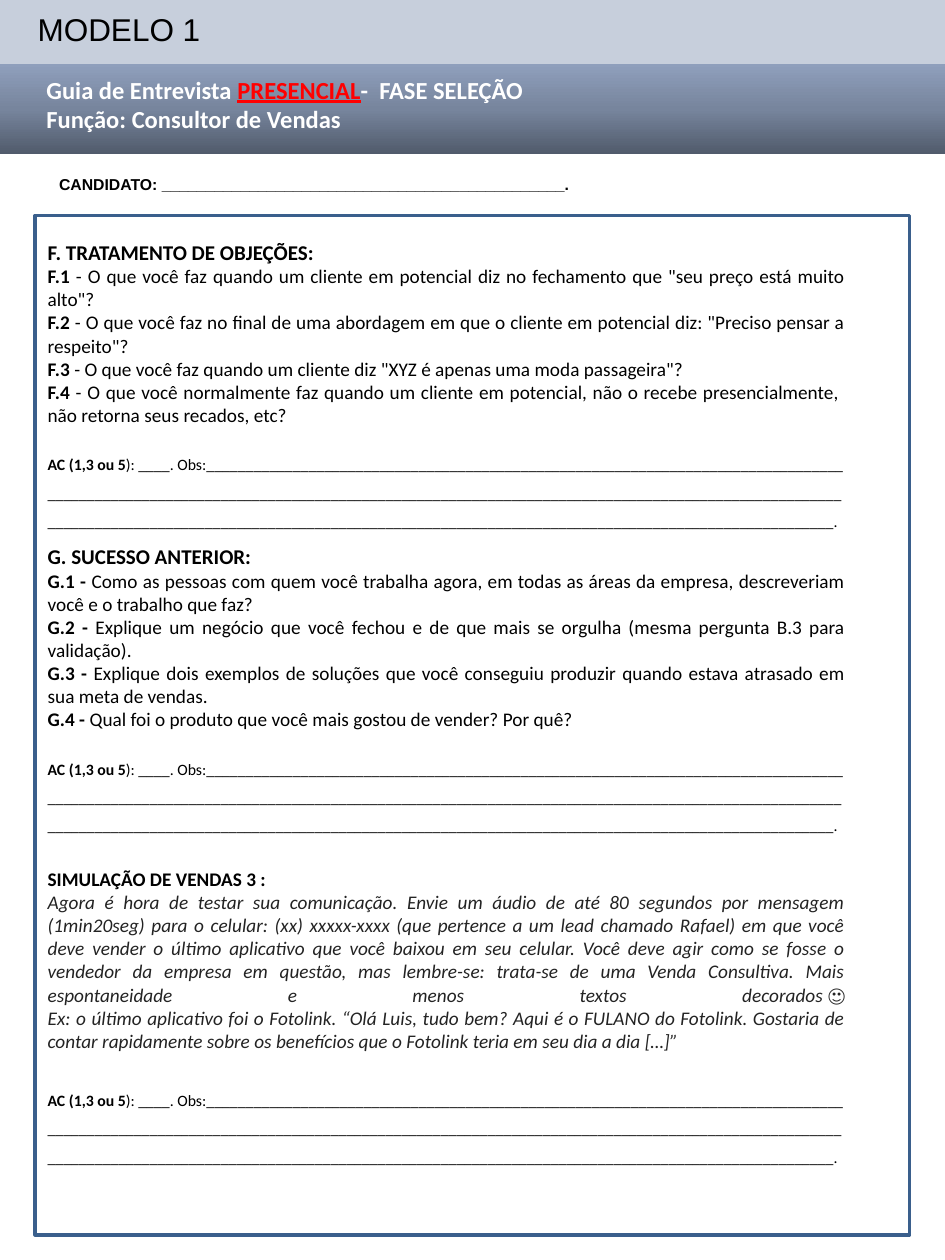
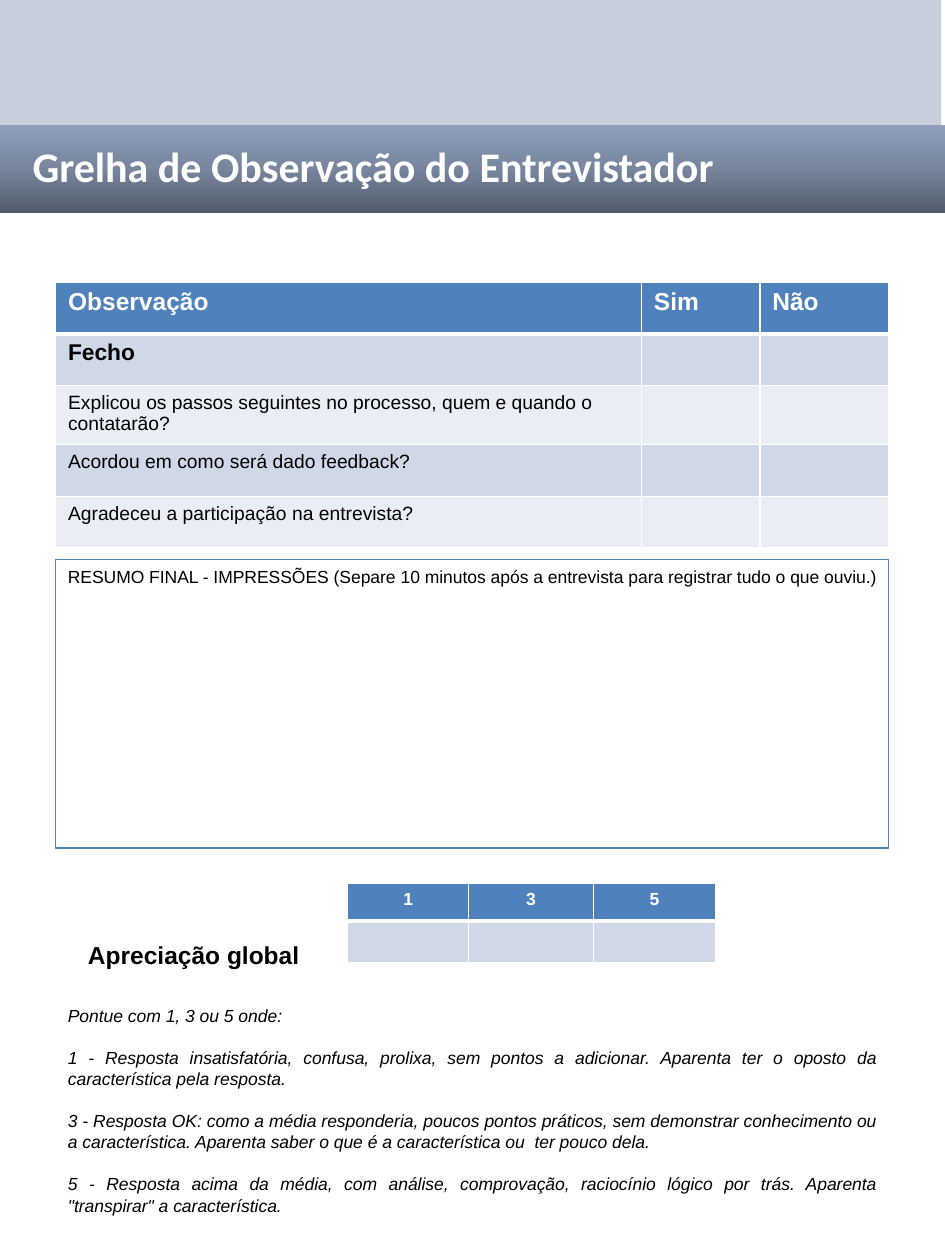
from copy import deepcopy
from dataclasses import dataclass

from lxml import etree
from pptx import Presentation
from pptx.dml.color import RGBColor
from pptx.enum.shapes import MSO_SHAPE as Preset
from pptx.enum.text import MSO_ANCHOR as Anchor, PP_ALIGN as Align
from pptx.oxml.ns import qn
from pptx.util import Inches, Pt


@dataclass(frozen=True)
class Theme:
    heading_font: str = "Calibri"
    body_font: str = "Arial"
    white: str = "FFFFFF"
    black: str = "000000"
    red: str = "FF0000"
    script_text: str = "232323"
    band: str = "C7CFDC"
    gradient: tuple = ("8F9FBC", "77859D", "515B6C")
    frame: str = "3A5F8C"
    accent: str = "4F81BD"
    row_dark: str = "D0D8E8"
    row_light: str = "E9EDF4"
    title: int = 24
    label: int = 18
    subtitle: int = 14
    group: int = 13
    section: int = 12
    question: int = 11
    note: int = 10
    answer: int = 9


THEME = Theme()
PAGE_WIDTH, PAGE_HEIGHT = 7.5, 10

OBJECTIONS = [
    ("F.1 ", '- O que você faz quando um cliente em potencial diz no fechamento que '
             '"seu preço está muito alto"?'),
    ("F.2 ", '- O que você faz no final de uma abordagem em que o cliente em potencial diz: '
             '"Preciso pensar a respeito"?'),
    ("F.3 ", '- O que você faz quando um cliente diz "XYZ é apenas uma moda passageira"?'),
    ("F.4 ", "- O que você normalmente faz quando um cliente em potencial, não o recebe "
             "presencialmente,  não retorna seus recados, etc?"),
]
SUCCESSES = [
    ("G.1 - ", "Como as pessoas com quem você trabalha agora, em todas as áreas da empresa, "
               "descreveriam você e o trabalho que faz?"),
    ("G.2 - ", "Explique um negócio que você fechou e de que mais se orgulha (mesma pergunta "
               "B.3 para validação)."),
    ("G.3 - ", "Explique dois exemplos de soluções que você conseguiu produzir quando estava "
               "atrasado em sua meta de vendas."),
    ("G.4 - ", "Qual foi o produto que você mais gostou de vender? Por quê?"),
]
SIMULATION = (
    "Agora é hora de testar sua comunicação. Envie um áudio de até 80 segundos por mensagem "
    "(1min20seg) para o celular: (xx) xxxxx-xxxx (que pertence a um lead chamado Rafael) em que "
    "você deve vender o último aplicativo que você baixou em seu celular. Você deve agir como se "
    "fosse o vendedor da empresa em questão, mas lembre-se: trata-se de uma Venda Consultiva. "
    "Mais espontaneidade e menos textos decorados\u00a0")
EXAMPLE = (
    "Ex: o último aplicativo foi o Fotolink. “Olá Luis, tudo bem? Aqui é o FULANO do Fotolink. "
    "Gostaria de contar rapidamente sobre os benefícios que o Fotolink teria em seu dia a dia […]”")
SCORES = [
    "Pontue com 1, 3 ou 5 onde:",
    "1 - Resposta insatisfatória, confusa, prolixa, sem pontos a adicionar. Aparenta ter o "
    "oposto da característica pela resposta.",
    "3 - Resposta OK: como a média responderia, poucos pontos práticos, sem demonstrar "
    "conhecimento ou a característica. Aparenta saber o que é a característica ou  ter pouco dela.",
    '5 - Resposta acima da média, com análise, comprovação, raciocínio lógico por trás. Aparenta '
    '"transpirar" a característica.',
]


def rgb(value):
    return RGBColor.from_string(value)


# Text
def add_text_box(slide, left, top, width, height, anchor=Anchor.TOP):
    box = slide.shapes.add_textbox(Inches(left), Inches(top), Inches(width), Inches(height))
    frame = box.text_frame
    frame.word_wrap = True
    frame.vertical_anchor = anchor
    return frame


def add_paragraph(frame, text, size, font=THEME.body_font, color=THEME.black, bold=None,
                  italic=None, align=Align.LEFT, before=0, spacing=None):
    """Fill the frame's first paragraph, or append one when it is taken."""
    paragraph = frame.paragraphs[0]
    if paragraph.runs:
        paragraph = frame.add_paragraph()
    paragraph.alignment = align
    paragraph.space_before = Pt(before)
    if spacing:
        paragraph.line_spacing = spacing
    paragraph.font.name = font
    paragraph.font.size = Pt(size)
    paragraph.font.color.rgb = rgb(color)
    paragraph.font.bold = bold
    paragraph.font.italic = italic
    if text:
        add_run(paragraph, text)
    return paragraph


def add_run(paragraph, text, **style):
    run = paragraph.add_run()
    run.text = text
    for name, value in style.items():
        setattr(run.font, name, value)
    return run


# Shapes
def add_rectangle(slide, left, top, width, height, fill=None, line=None, line_width=1):
    shape = slide.shapes.add_shape(Preset.RECTANGLE, Inches(left), Inches(top),
                                   Inches(width), Inches(height))
    shape.shadow.inherit = False
    if fill:
        shape.fill.solid()
        shape.fill.fore_color.rgb = rgb(fill)
    else:
        shape.fill.background()
    if line:
        shape.line.color.rgb = rgb(line)
        shape.line.width = Pt(line_width)
    else:
        shape.line.fill.background()
    return shape


def add_gradient_band(slide, top, height):
    fill = add_rectangle(slide, 0, top, PAGE_WIDTH, height, THEME.band).fill
    fill.gradient()
    fill.gradient_angle = 270
    first = fill._fill._gradFill.find(qn("a:gsLst"))[0]
    first.addnext(deepcopy(first))
    for stop, color, position in zip(fill.gradient_stops, THEME.gradient, (0, 0.5, 1)):
        stop.color.rgb = rgb(color)
        stop.position = position


def add_header(slide, left, top_band, gradient_band, title_box):
    """Draw both header bands and return the text frame of the title."""
    add_rectangle(slide, left, top_band[0], PAGE_WIDTH, top_band[1], THEME.band)
    add_gradient_band(slide, *gradient_band)
    return add_text_box(slide, *title_box, anchor=Anchor.MIDDLE)


# Tables
def set_borders(cell, **widths):
    properties = cell._tc.get_or_add_tcPr()
    for index, side in enumerate(("L", "R", "T", "B")):
        line = etree.Element(qn(f"a:ln{side}"), w=str(Pt(widths.get(side, 1))))
        solid = etree.SubElement(line, qn("a:solidFill"))
        etree.SubElement(solid, qn("a:srgbClr"), val=THEME.white)
        properties.insert(index, line)


def add_grid(slide, left, top, columns, heights, rows, style_cell):
    """Add a table; style_cell(row, column) gives the text style of a cell."""
    table = slide.shapes.add_table(len(rows), len(columns), Inches(left), Inches(top),
                                   Inches(sum(columns)), Inches(sum(heights))).table
    table.first_row = table.horz_banding = False
    for column, width in zip(table.columns, columns):
        column.width = Inches(width)
    for row_index, (row, height, texts) in enumerate(zip(table.rows, heights, rows)):
        row.height = Inches(height)
        fill = THEME.row_dark if row_index % 2 else THEME.row_light
        for column_index, cell in enumerate(row.cells):
            text = texts[column_index] if column_index < len(texts) else ""
            cell.fill.solid()
            cell.fill.fore_color.rgb = rgb(fill if row_index else THEME.accent)
            set_borders(cell, B=1 if row_index else 3, T=3 if row_index == 1 else 1)
            if text:
                add_paragraph(cell.text_frame, text, **style_cell(row_index))
            else:
                cell.margin_top = cell.margin_bottom = 0


# Interview guide parts
def add_heading(frame, text, size=THEME.section, before=0):
    add_paragraph(frame, text, size, THEME.heading_font, bold=True, before=before)


def add_questions(frame, questions):
    for number, question in questions:
        paragraph = add_paragraph(frame, "", THEME.question, THEME.heading_font,
                                  align=Align.JUSTIFY)
        add_run(paragraph, number, bold=True)
        add_run(paragraph, question)


def add_answer_lines(frame, before=11):
    style = dict(size=THEME.answer, font=THEME.heading_font, spacing=1.5)
    paragraph = add_paragraph(frame, "", before=before, **style)
    add_run(paragraph, "AC (1,3 ou 5", bold=True)
    add_run(paragraph, "): ____. Obs:" + "_" * 81)
    add_paragraph(frame, "_" * 201 + ".", **style)


def add_simulation(frame):
    add_heading(frame, "SIMULAÇÃO DE VENDAS 3 :", THEME.question, before=18.3)
    paragraph = add_paragraph(frame, "", THEME.question, THEME.heading_font,
                              THEME.script_text, align=Align.JUSTIFY)
    add_run(paragraph, SIMULATION, italic=True)
    add_run(paragraph, "🙂")
    paragraph.add_line_break()
    add_run(paragraph, EXAMPLE, italic=True)


# Slides
def build_interview_guide(slide):
    title = add_header(slide, 0, (-0.01, 0.52), (0.51, 0.71), (0.27, 0.54, 7.22, 0.57))
    style = dict(size=THEME.subtitle, font=THEME.heading_font, color=THEME.white, bold=True)
    paragraph = add_paragraph(title, "Guia de Entrevista ", **style)
    stage = add_run(paragraph, "PRESENCIAL", underline=True)
    stage.font.color.rgb = rgb(THEME.red)
    add_run(paragraph, "-  FASE SELEÇÃO")
    add_paragraph(title, "Função: Consultor de Vendas", **style)

    add_rectangle(slide, 0.28, 1.71, 6.94, 8.09, THEME.white, THEME.frame, 2)
    guide = add_text_box(slide, 0.28, 1.85, 6.53, 7.68)
    add_heading(guide, "F. TRATAMENTO DE OBJEÇÕES:")
    add_questions(guide, OBJECTIONS)
    add_answer_lines(guide)
    add_heading(guide, "G. SUCESSO ANTERIOR:", before=7.3)
    add_questions(guide, SUCCESSES)
    add_answer_lines(guide)
    add_simulation(guide)
    add_answer_lines(guide, before=16.5)

    add_paragraph(add_text_box(slide, 0.2, 0.03, 1.55, 0.4), "MODELO 1", THEME.label)
    add_paragraph(add_text_box(slide, 0.37, 1.26, 6.61, 0.3),
                  "CANDIDATO: " + "_" * 46 + ".", THEME.answer, bold=True, spacing=1.5)


def observation_style(row):
    if row == 0:
        return dict(size=THEME.subtitle, color=THEME.white, bold=True)
    if row == 1:
        return dict(size=THEME.group, bold=True)
    return dict(size=THEME.question)


def score_style(row):
    return dict(size=THEME.note, color=THEME.white, bold=True, align=Align.CENTER)


def build_observation_grid(slide):
    title = add_header(slide, -0.03, (0, 1.01), (0.99, 0.7), (0.16, 1.06, 7.22, 0.51))
    add_paragraph(title, "Grelha de Observação do Entrevistador", THEME.title,
                  THEME.heading_font, THEME.white, bold=True)

    # Observation and score tables
    add_grid(slide, 0.44, 2.24, (4.65, 0.94, 1.02), (0.41, 0.41, 0.47, 0.41, 0.41), [
        ("Observação", "Sim", "Não"),
        ("Fecho",),
        ("Explicou os passos seguintes no processo, quem e quando o contatarão?",),
        ("Acordou em como será dado feedback?",),
        ("Agradeceu a participação na entrevista?",),
    ], observation_style)
    add_grid(slide, 2.76, 7.01, (0.96, 0.99, 0.97), (0.3, 0.33),
             [("1", "3", "5"), ()], score_style)
    add_paragraph(add_text_box(slide, 0.6, 7.41, 2.16, 0.34), "Apreciação global",
                  THEME.subtitle, bold=True)

    # Score key
    key = add_text_box(slide, 0.44, 7.93, 6.61, 1.78)
    for index, text in enumerate(SCORES):
        add_paragraph(key, text, THEME.note, italic=True, align=Align.JUSTIFY,
                      before=12 if index else 0)

    # Final summary
    summary = add_rectangle(slide, 0.44, 4.44, 6.61, 2.29, line=THEME.accent, line_width=0.75)
    frame = summary.text_frame
    frame.word_wrap = True
    frame.vertical_anchor = Anchor.TOP
    frame.margin_right = Inches(0.05)
    add_paragraph(frame, "RESUMO FINAL - IMPRESSÕES (Separe 10 minutos após a entrevista para "
                         "registrar tudo o que ouviu.)", THEME.note)


def main():
    presentation = Presentation()
    presentation.slide_width = Inches(PAGE_WIDTH)
    presentation.slide_height = Inches(PAGE_HEIGHT)
    blank = presentation.slide_layouts[6]
    for build in (build_interview_guide, build_observation_grid):
        build(presentation.slides.add_slide(blank))
    presentation.save("out.pptx")


if __name__ == "__main__":
    main()
